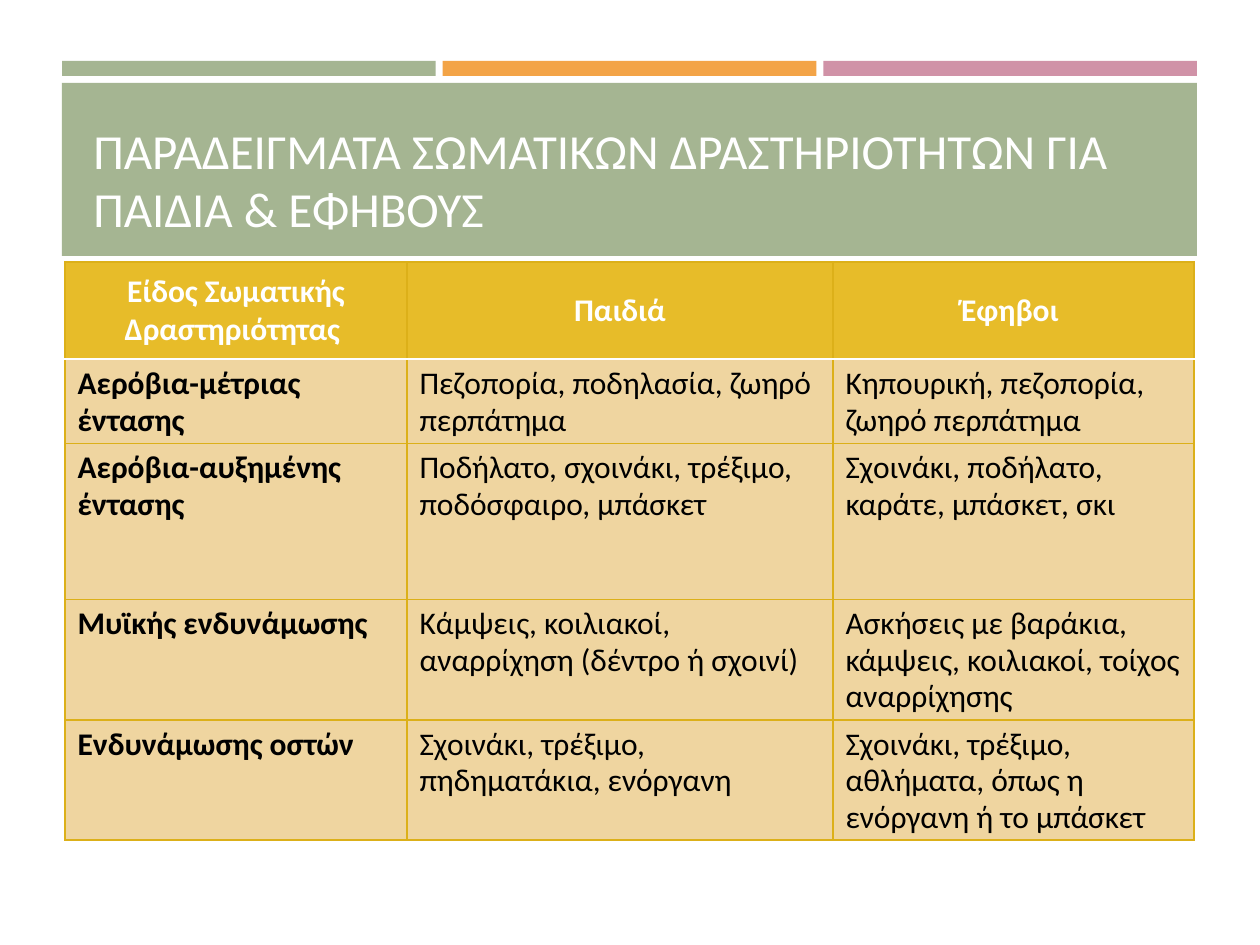
from lxml.etree import SubElement
from pptx import Presentation
from pptx.dml.color import RGBColor
from pptx.enum.shapes import MSO_SHAPE as Shape
from pptx.enum.text import MSO_ANCHOR as Anchor, PP_ALIGN as Align
from pptx.oxml.ns import qn
from pptx.util import Emu, Pt

PX = 914400 / 126
GREEN, ORANGE, PINK = "A5B592", "F3A447", "D092A7"
GOLD, SAND, GRID = "E7BC29", "EFD5A0", "DCB019"
WHITE, BLACK = "FFFFFF", "000000"

TITLE = "ΠΑΡΑΔΕΙΓΜΑΤΑ ΣΩΜΑΤΙΚΩΝ ΔΡΑΣΤΗΡΙΟΤΗΤΩΝ ΓΙΑ ΠΑΙΔΙΑ & ΕΦΗΒΟΥΣ"
COLUMN_WIDTHS = [342, 426, 361]
ROW_HEIGHTS = [97, 84, 156, 120, 120]
ACTIVITIES = [
    ["Είδος Σωματικής Δραστηριότητας ", "Παιδιά", "Έφηβοι "],
    ["Αερόβια-μέτριας έντασης", "Πεζοπορία, ποδηλασία, ζωηρό περπάτημα",
     "Κηπουρική, πεζοπορία, ζωηρό περπάτημα"],
    ["Αερόβια-αυξημένης έντασης", "Ποδήλατο, σχοινάκι, τρέξιμο, ποδόσφαιρο, μπάσκετ",
     "Σχοινάκι, ποδήλατο, καράτε, μπάσκετ, σκι"],
    ["Μυϊκής ενδυνάμωσης", "Κάμψεις, κοιλιακοί, αναρρίχηση (δέντρο ή σχοινί)",
     "Ασκήσεις με βαράκια, κάμψεις, κοιλιακοί, τοίχος αναρρίχησης"],
    ["Ενδυνάμωσης οστών", "Σχοινάκι, τρέξιμο, πηδηματάκια, ενόργανη",
     "Σχοινάκι, τρέξιμο, αθλήματα, όπως η ενόργανη ή το μπάσκετ"],
]


def px(length):
    return Emu(round(length * PX))


def color(value):
    return RGBColor.from_string(value)


def write(frame, text, size=18, ink=BLACK, bold=False, align=Align.LEFT,
          spacing=None, before=None):
    frame.word_wrap = True
    paragraph = frame.paragraphs[0]
    paragraph.alignment = align
    paragraph.line_spacing = spacing
    paragraph.space_before = before
    run = paragraph.add_run()
    run.text = text
    run.font.name = "Calibri"
    run.font.size = Pt(size)
    run.font.bold = bold
    run.font.color.rgb = color(ink)


def add_bar(slide, left, top, width, height, fill):
    shape = slide.shapes.add_shape(Shape.RECTANGLE, *map(px, (left, top, width, height)))
    shape.shadow.inherit = False
    shape.fill.solid()
    shape.fill.fore_color.rgb = color(fill)
    shape.line.fill.background()


def set_border(cell, side, ink, width):
    line = SubElement(cell._tc.get_or_add_tcPr(), qn(f"a:ln{side}"), w=str(Pt(width)))
    SubElement(SubElement(line, qn("a:solidFill")), qn("a:srgbClr"), val=ink)


def add_header(slide, left, top, width, height):
    # Three accent strips with equal gaps
    gap = 7
    strip = (width - 2 * gap) / 3
    for index, fill in enumerate([GREEN, ORANGE, PINK]):
        add_bar(slide, left + index * (strip + gap), top, strip, 15, fill)
    # Title band
    add_bar(slide, left, top + 22, width, height - 22, GREEN)
    box = slide.shapes.add_textbox(px(left + 19), px(top + 34), px(width - 34), px(149))
    box.text_frame.vertical_anchor = Anchor.BOTTOM
    write(box.text_frame, TITLE, size=28, ink=WHITE)


def add_activity_table(slide, left, top):
    frame = slide.shapes.add_table(
        len(ROW_HEIGHTS), len(COLUMN_WIDTHS), px(left), px(top),
        px(sum(COLUMN_WIDTHS)), px(sum(ROW_HEIGHTS)))
    table = frame.table
    for column, width in zip(table.columns, COLUMN_WIDTHS):
        column.width = px(width)
    for row, height in zip(table.rows, ROW_HEIGHTS):
        row.height = px(height)
    for row_index, texts in enumerate(ACTIVITIES):
        for column_index, text in enumerate(texts):
            cell = table.cell(row_index, column_index)
            heading = row_index == 0
            # Borders come before the fill; a white rule closes the heading row
            for side in "LRTB":
                rule = (row_index, side) in [(0, "B"), (1, "T")]
                set_border(cell, side, *((WHITE, 1.75) if rule else (GRID, 1)))
            cell.fill.solid()
            cell.fill.fore_color.rgb = color(GOLD if heading else SAND)
            if heading:
                cell.vertical_anchor = Anchor.MIDDLE
                write(cell.text_frame, text, ink=WHITE, bold=True,
                      align=Align.CENTER, before=Pt(12))
            else:
                write(cell.text_frame, text, bold=column_index == 0, spacing=0.95)


def main():
    presentation = Presentation()
    presentation.slide_width, presentation.slide_height = px(1260), px(945)
    slide = presentation.slides.add_slide(presentation.slide_layouts[6])
    add_header(slide, 62, 61, 1135, 195)
    add_activity_table(slide, 65, 262)
    presentation.save("out.pptx")


if __name__ == "__main__":
    main()
